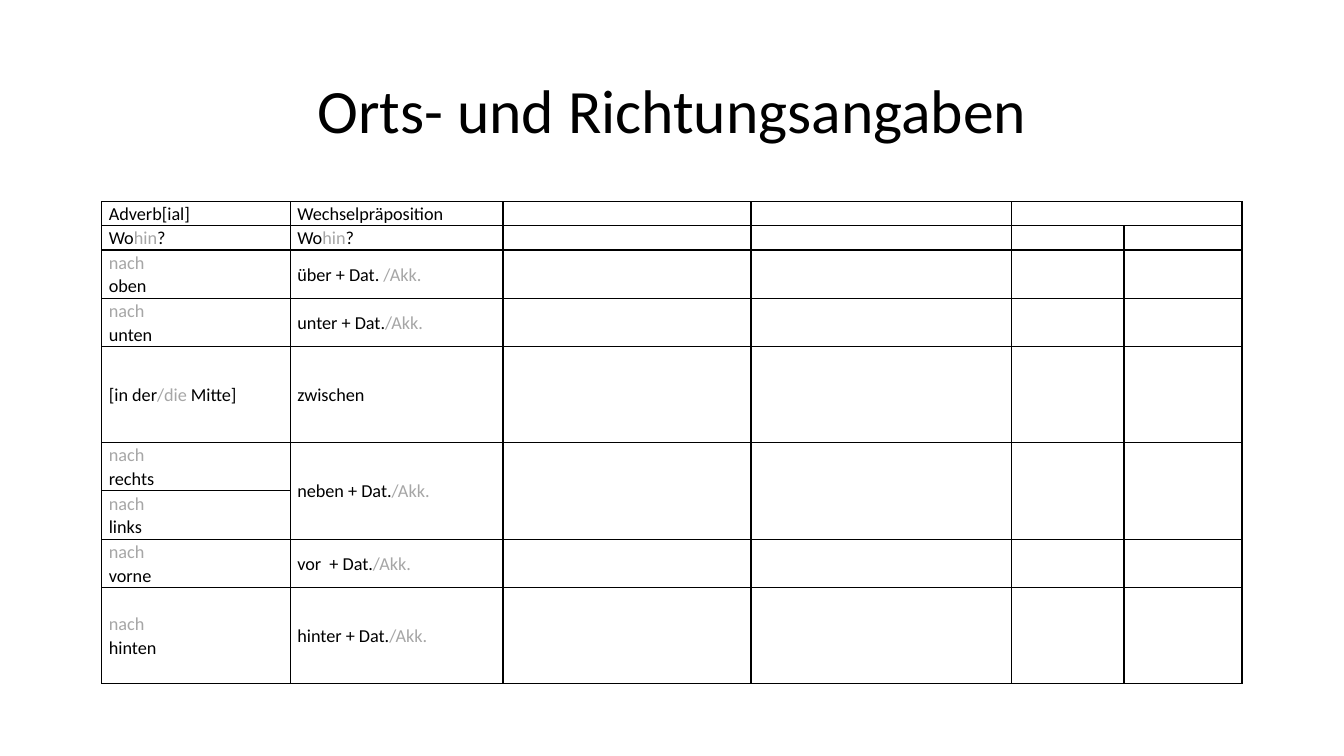
from lxml.etree import SubElement
from pptx import Presentation
from pptx.dml.color import RGBColor
from pptx.enum.text import MSO_ANCHOR as Anchor, PP_ALIGN as Align
from pptx.oxml.ns import qn
from pptx.util import Inches, Pt

BLACK = RGBColor(0x00, 0x00, 0x00)
GREY = RGBColor(0xA6, 0xA6, 0xA6)
FONT = "Calibri"
CELL_SIZE = 13
COLUMN_WIDTHS = [1.87, 2.11, 2.46, 2.58, 1.12, 1.17]
ROW_HEIGHTS = [0.24, 0.24, 0.48, 0.48, 0.95, 0.48, 0.48, 0.48, 0.95]
ENTRIES = [
    ("Adverb[ial]", "Wechselpräposition"),
    ("Wo|hin|?", "Wo|hin|?"),
    ("|nach\v|oben", "über + Dat. |/Akk."),
    ("|nach\v|unten", "unter + Dat.|/Akk."),
    ("[in der|/die| Mitte]", "zwischen"),
    ("|nach\v|rechts", "neben + Dat.|/Akk."),
    ("|nach\v|links", ""),
    ("|nach \v|vorne", "vor  + Dat.|/Akk."),
    ("|nach\nhinten", "hinter + Dat.|/Akk."),
]


def style_run(run, size, color):
    """Apply the slide font with a size and colour to a run."""
    run.font.name = FONT
    run.font.size = Pt(size)
    run.font.color.rgb = color


def add_title(slide, text):
    """Add the centred title."""
    shape = slide.shapes.add_textbox(Inches(0.92), Inches(0.4), Inches(11.5), Inches(1.45))
    frame = shape.text_frame
    frame.word_wrap = True
    frame.vertical_anchor = Anchor.MIDDLE
    frame.text = text
    paragraph = frame.paragraphs[0]
    paragraph.alignment = Align.CENTER
    paragraph.line_spacing = 0.9
    style_run(paragraph.runs[0], 44, BLACK)


def fill_paragraph(paragraph, markup):
    """Write text whose parts between bars alternate between black and grey."""
    paragraph.line_spacing = 1.07
    size = str(CELL_SIZE * 100)
    for index, part in enumerate(markup.split("|")):
        if not part:
            continue
        run = paragraph.add_run()
        run.text = part.rstrip("\v")
        style_run(run, CELL_SIZE, GREY if index % 2 else BLACK)
        if part.endswith("\v"):
            paragraph.add_line_break()
            SubElement(paragraph._p[-1], qn("a:rPr"), sz=size)
    SubElement(paragraph._p, qn("a:endParaRPr"), sz=size)


def format_cell(cell):
    """Give a cell thin black borders, no fill and narrow margins."""
    cell.margin_left = cell.margin_right = Inches(0.07)
    cell.margin_top = cell.margin_bottom = 0
    cell.vertical_anchor = Anchor.MIDDLE
    properties = cell._tc.get_or_add_tcPr()
    for side in ("L", "R", "T", "B"):
        line = SubElement(properties, qn(f"a:ln{side}"), w=str(Pt(1)))
        fill = SubElement(line, qn("a:solidFill"))
        SubElement(fill, qn("a:srgbClr"), val=str(BLACK))
    cell.fill.background()


def add_adverb_table(slide):
    """Add the table of adverbs and two-way prepositions."""
    frame = slide.shapes.add_table(
        len(ROW_HEIGHTS), len(COLUMN_WIDTHS), Inches(1.01), Inches(2),
        Inches(sum(COLUMN_WIDTHS)), Inches(sum(ROW_HEIGHTS)))
    table = frame.table
    table.first_row = table.horz_banding = False
    for column, width in zip(table.columns, COLUMN_WIDTHS):
        column.width = Inches(width)
    for row, height, entries in zip(table.rows, ROW_HEIGHTS, ENTRIES):
        row.height = Inches(height)
        for index, cell in enumerate(row.cells):
            format_cell(cell)
            lines = entries[index].split("\n") if index < len(entries) else [""]
            fill_paragraph(cell.text_frame.paragraphs[0], lines[0])
            for line in lines[1:]:
                fill_paragraph(cell.text_frame.add_paragraph(), line)
    table.cell(0, 4).merge(table.cell(0, 5))
    for index in range(1, len(COLUMN_WIDTHS)):
        table.cell(5, index).merge(table.cell(6, index))


def main():
    """Build and save the slide."""
    presentation = Presentation()
    presentation.slide_width = Inches(13.33)
    presentation.slide_height = Inches(7.5)
    slide = presentation.slides.add_slide(presentation.slide_layouts[6])
    add_title(slide, "Orts- und Richtungsangaben")
    add_adverb_table(slide)
    presentation.save("out.pptx")


if __name__ == "__main__":
    main()
